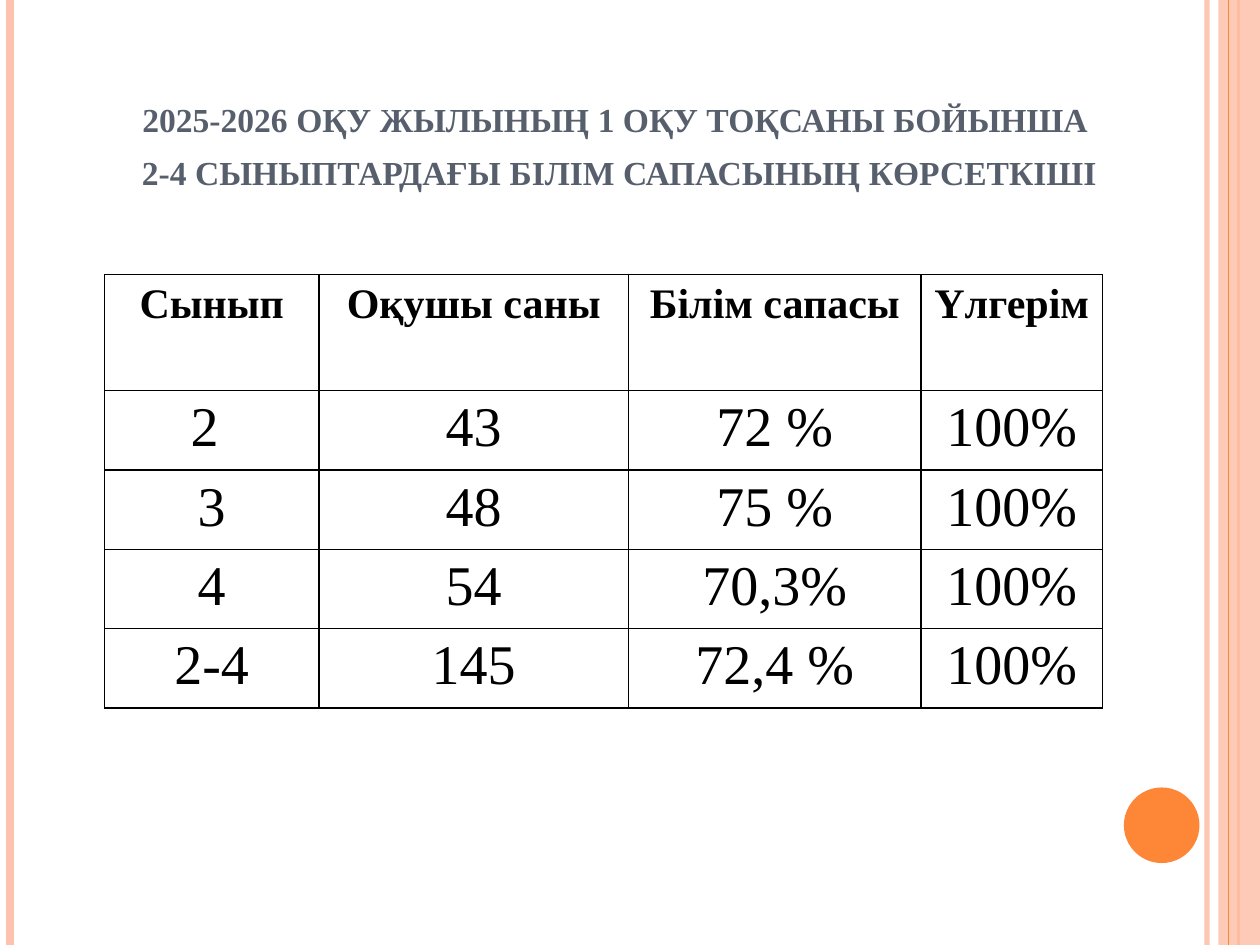
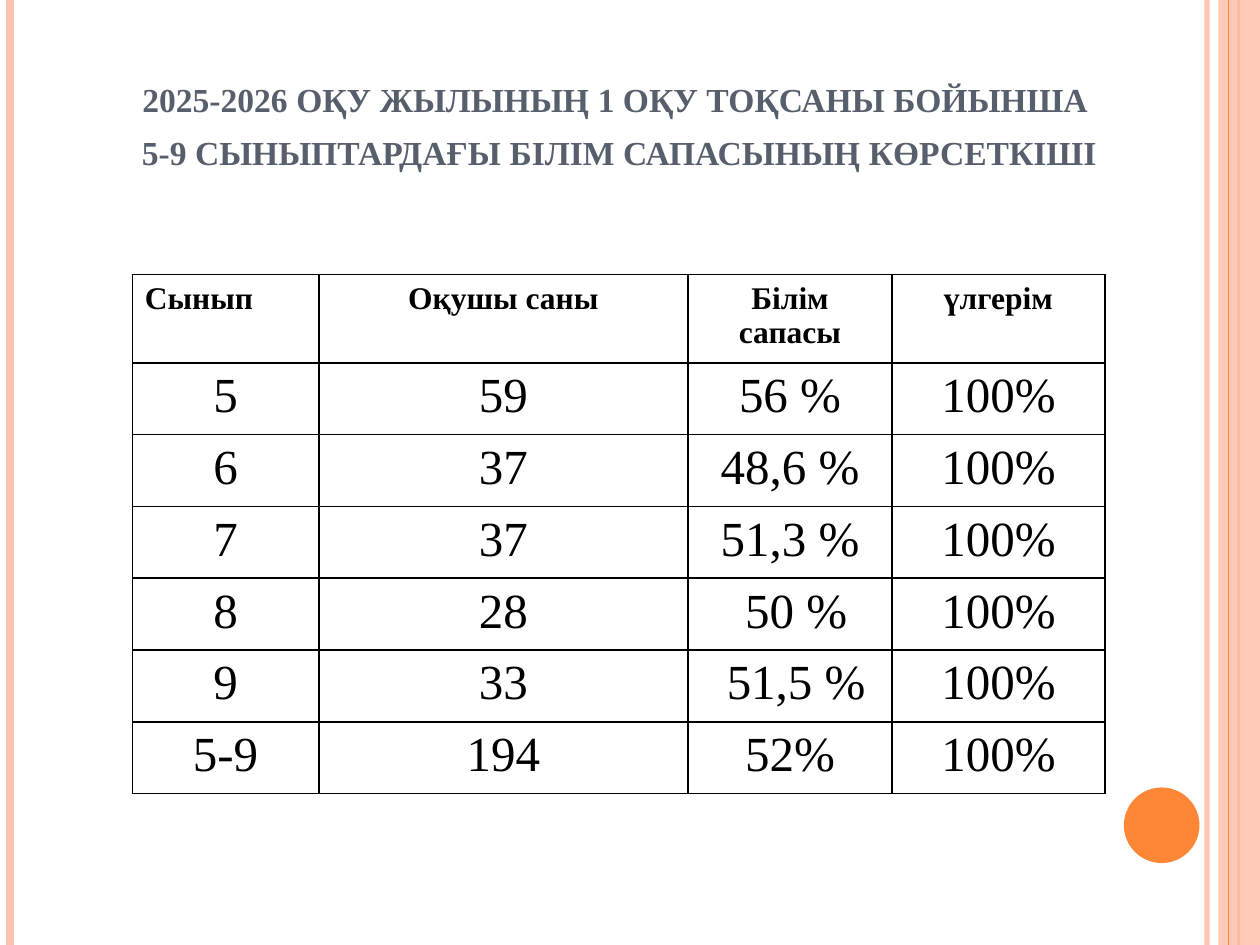
import dataclasses

import lxml.etree
import pptx
import pptx.dml.color
import pptx.enum.shapes
import pptx.enum.text
import pptx.oxml.ns
import pptx.util

Inches = pptx.util.Inches
Pt = pptx.util.Pt
qn = pptx.oxml.ns.qn
CENTER = pptx.enum.text.PP_ALIGN.CENTER
LEFT = pptx.enum.text.PP_ALIGN.LEFT


@dataclasses.dataclass(frozen=True)
class Theme:
    font: str = "Times New Roman"
    peach: str = "FEC3AE"
    orange: str = "FE8637"
    title_color: str = "575F6D"
    ink: str = "000000"
    title_size: int = 24
    border_width: float = 1


THEME = Theme()
SLIDE_WIDTH, SLIDE_HEIGHT = 10, 7.5

# Vertical rules: x, colour, width in points, opacity in percent
RULES_BEHIND_BAND = [
    (9.58, THEME.peach, 3, 93),
    (0.08, THEME.peach, 4.5, 100),
    (9.83, THEME.orange, 1.5, 100),
]
RULE_ON_BAND = (9.75, THEME.orange, 0.75, 100)

TITLE_LINES = [
    "2025-2026 оқу жылының 1 оқу тоқсаны бойынша ",
    "{} сыныптардағы білім сапасының көрсеткіші",
]


@dataclasses.dataclass(frozen=True)
class GradeReport:
    grades: str
    title_top: float
    table_left: float
    column_widths: tuple
    header_height: float
    row_height: float
    header_size: int
    body_size: int
    first_header_align: int
    rows: list


REPORTS = [
    GradeReport(
        "2-4", 0.68, 0.83, (1.7, 2.46, 2.32, 1.44), 0.92, 0.63, 24, 32, CENTER,
        [
            ("Сынып", "Оқушы саны", "Білім сапасы", "Үлгерім"),
            ("2 ", "43", "72 %", "100%"),
            ("3", "48", "75 %", "100%"),
            ("4", "54", "70,3%", "100%"),
            ("2-4", "145", "72,4 %", "100%"),
        ],
    ),
    GradeReport(
        "5-9", 0.52, 1.05, (1.48, 2.93, 1.62, 1.69), 0.7, 0.57, 18, 28, LEFT,
        [
            ("Сынып", "Оқушы саны", "Білім сапасы", "үлгерім"),
            ("5", "59", "56 %", "100%"),
            ("6", "37", "48,6 %", "100%"),
            ("7", "37", "51,3 %", "100%"),
            ("8", "28", " 50 %", "100%"),
            ("9", "33", " 51,5 %", "100%"),
            ("5-9", "194", "52%", "100%"),
        ],
    ),
]


def rgb(color):
    return pptx.dml.color.RGBColor.from_string(color)


def set_opacity(shape, percent):
    for color in shape._element.iter(qn("a:srgbClr")):
        alpha = lxml.etree.SubElement(color, qn("a:alpha"))
        alpha.set("val", str(percent * 1000))


def style_paragraph(paragraph, size, color, bold, align=CENTER):
    paragraph.alignment = align
    for run in paragraph.runs:
        run.font.name = THEME.font
        run.font.size = Pt(size)
        run.font.bold = bold
        run.font.color.rgb = rgb(color)


def add_rule(slide, x, color, width, opacity):
    rule = slide.shapes.add_connector(
        pptx.enum.shapes.MSO_CONNECTOR.STRAIGHT,
        Inches(x), Inches(0), Inches(x), Inches(SLIDE_HEIGHT))
    rule.line.color.rgb = rgb(color)
    rule.line.width = Pt(width)
    if opacity < 100:
        set_opacity(rule, opacity)
    lxml.etree.SubElement(rule._element.spPr, qn("a:effectLst"))


def add_plain_shape(slide, kind, left, top, width, height, color):
    shape = slide.shapes.add_shape(
        kind, Inches(left), Inches(top), Inches(width), Inches(height))
    shape.shadow.inherit = False
    shape.fill.solid()
    shape.fill.fore_color.rgb = rgb(color)
    shape.line.fill.background()
    return shape


def add_frame(slide):
    """Side rules, right band and corner disc shared by the slides."""
    kinds = pptx.enum.shapes.MSO_SHAPE
    for rule in RULES_BEHIND_BAND:
        add_rule(slide, *rule)
    band_width = 0.33
    band = add_plain_shape(slide, kinds.RECTANGLE, SLIDE_WIDTH - band_width, 0,
                           band_width, SLIDE_HEIGHT, THEME.peach)
    set_opacity(band, 87)
    add_rule(slide, *RULE_ON_BAND)
    add_plain_shape(slide, kinds.OVAL, 8.92, 6.25, 0.6, 0.6, THEME.orange)


def format_title(slide, grades, left, top, width, height):
    title = slide.shapes.title
    title.left, title.top = Inches(left), Inches(top)
    title.width, title.height = Inches(width), Inches(height)
    text_frame = title.text_frame
    text_frame.text = "\n".join(TITLE_LINES).format(grades)
    text_frame.word_wrap = True
    text_frame.auto_size = pptx.enum.text.MSO_AUTO_SIZE.NONE
    text_frame.vertical_anchor = pptx.enum.text.MSO_ANCHOR.BOTTOM
    for paragraph in text_frame.paragraphs:
        paragraph.line_spacing = 1.05
        style_paragraph(paragraph, THEME.title_size, THEME.title_color, True)
        for run in paragraph.runs:
            run.font._element.set("cap", "small")


def set_borders(cell):
    properties = cell._tc.get_or_add_tcPr()
    for side in ("a:lnL", "a:lnR", "a:lnT", "a:lnB"):
        border = lxml.etree.SubElement(
            properties, qn(side), w=str(Pt(THEME.border_width)))
        fill = lxml.etree.SubElement(border, qn("a:solidFill"))
        lxml.etree.SubElement(fill, qn("a:srgbClr"), val=THEME.ink)


def add_grade_table(slide, report, left, top):
    row_count, column_count = len(report.rows), len(report.column_widths)
    height = report.header_height + report.row_height * (row_count - 1)
    table = slide.shapes.add_table(
        row_count, column_count, Inches(left), Inches(top),
        Inches(sum(report.column_widths)), Inches(height)).table
    table.first_row = False
    table.horz_banding = False
    for column, width in zip(table.columns, report.column_widths):
        column.width = Inches(width)
    for row_index, values in enumerate(report.rows):
        is_header = row_index == 0
        table.rows[row_index].height = Inches(
            report.header_height if is_header else report.row_height)
        size = report.header_size if is_header else report.body_size
        for column_index, value in enumerate(values):
            cell = table.cell(row_index, column_index)
            cell.text_frame.text = value
            is_first_header = is_header and column_index == 0
            align = report.first_header_align if is_first_header else CENTER
            style_paragraph(cell.text_frame.paragraphs[0], size, THEME.ink,
                            is_header, align)
            set_borders(cell)
            cell.fill.background()


def add_report_slide(presentation, report):
    title_only = presentation.slide_layouts.get_by_name("Title Only")
    slide = presentation.slides.add_slide(title_only)
    add_frame(slide)
    format_title(slide, report.grades, 0.83, report.title_top, 8.17, 0.91)
    add_grade_table(slide, report, report.table_left, 2.18)


def main():
    presentation = pptx.Presentation()
    presentation.slide_width = Inches(SLIDE_WIDTH)
    presentation.slide_height = Inches(SLIDE_HEIGHT)
    for report in REPORTS:
        add_report_slide(presentation, report)
    presentation.save("out.pptx")


if __name__ == "__main__":
    main()
